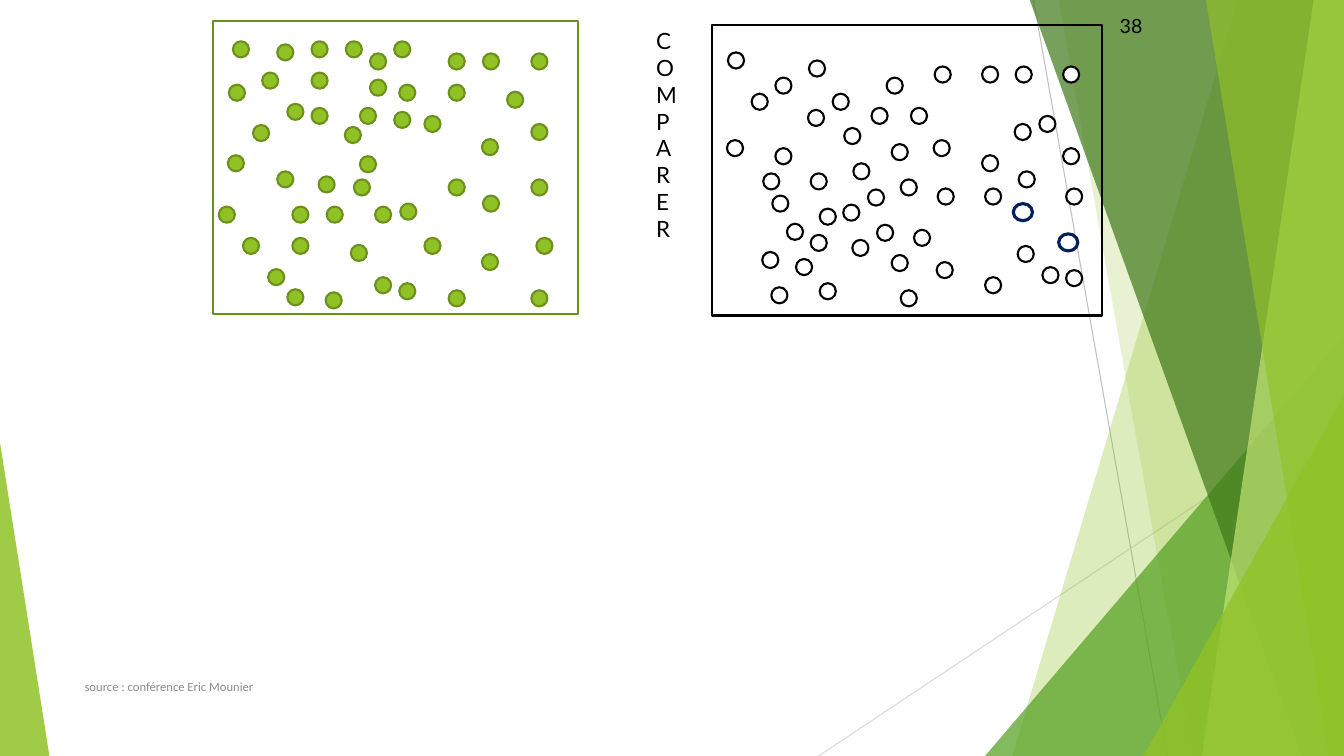
from dataclasses import dataclass, field

from lxml import etree
from pptx import Presentation
from pptx.dml.color import RGBColor
from pptx.enum.shapes import MSO_CONNECTOR, MSO_SHAPE
from pptx.enum.text import MSO_ANCHOR, MSO_AUTO_SIZE, PP_ALIGN
from pptx.oxml.ns import qn
from pptx.util import Inches, Pt

STRAIGHT = MSO_CONNECTOR.STRAIGHT
OVAL, RECTANGLE, TRIANGLE = MSO_SHAPE.OVAL, MSO_SHAPE.RECTANGLE, MSO_SHAPE.ISOSCELES_TRIANGLE
TOP, MIDDLE = MSO_ANCHOR.TOP, MSO_ANCHOR.MIDDLE
LEFT, RIGHT = PP_ALIGN.LEFT, PP_ALIGN.RIGHT
GROW, FIXED = MSO_AUTO_SIZE.SHAPE_TO_FIT_TEXT, MSO_AUTO_SIZE.NONE

WHITE = RGBColor(0xFF, 0xFF, 0xFF)
BLACK = RGBColor(0x00, 0x00, 0x00)
NAVY = RGBColor(0x00, 0x20, 0x60)
GRAY = RGBColor(0x8C, 0x8C, 0x8C)
SILVER = RGBColor(0xBF, 0xBF, 0xBF)
PALE_GRAY = RGBColor(0xD9, 0xD9, 0xD9)
LIME = RGBColor(0x90, 0xC2, 0x26)
PALE_LIME = RGBColor(0xC0, 0xE4, 0x74)
OLIVE = RGBColor(0x6B, 0x90, 0x1C)
GREEN = RGBColor(0x54, 0xA0, 0x21)
FOREST = RGBColor(0x3F, 0x78, 0x19)

WIDTH, HEIGHT = 13.33, 7.5
DOT = 0.16

COLUMNS = (0, 0.48, 0.48, 0.24, -0.01, 0.82, 1.3, 1.3, 1.06, 0.81)
GREEN_SPREAD, WHITE_SPREAD = 1, 0.98

ARCH = (0, 0, 0.31, 0.62, 0.31, 0, 0, 0.7, 0.38, 0.85)
SLOPE = (0, -0.4, 0.86, 0.4, 0.7, 0.23, 0.23, 0.71, 0.94, 0.91)
CROWN = (0, -0.24, 0.86, 0.34, 0.79, -0.08, -0.24, 0.86, 0.34, 0.5)
FAN = (0, 0, 0.61, 0.5, 0.78, -0.45, -0.29, 0.81, 0.16, 0.31)
WAVE = (0, 0.25, 0.95, 0.41, 0.87, 0.08, 0.25, 0.55, 0.41, 0.57)
SHELF = (0, 0, 0.88, 0.41, 0.73, 0, 0, 0.81, 0.49, 0.57)


@dataclass
class Cluster:
    left: float
    top: float
    rows: tuple
    strays: dict = field(default_factory=dict)

    def places(self, spread):
        for slot, (column, row) in enumerate(zip(COLUMNS, self.rows)):
            dx, dy = self.strays.get(slot, (0, 0))
            yield self.left + column * spread + dx, self.top + row + dy


GREEN_CLUSTERS = [
    Cluster(2.61, 0.41, ARCH, {0: (-0.3, 0)}),
    Cluster(3.97, 0.53, ARCH, {0: (-0.3, 0)}),
    Cluster(2.42, 2.05, ARCH, {0: (-0.25, 0)}),
    Cluster(2.27, 0.84, SLOPE, {8: (0.18, 0), 9: (0.08, 0)}),
    Cluster(3.97, 2.02, CROWN, {8: (0.29, 0)}),
]
WHITE_CLUSTERS = [
    Cluster(7.57, 1.72, FAN),
    Cluster(7.66, 2.07, FAN, {0: (0, -0.13), 2: (0, 0.13)}),
    Cluster(7.22, 0.52, WAVE, {6: (0.3, 0), 7: (0.15, 0)}),
    Cluster(9.27, 0.66, SHELF, {3: (-0.47, 0)}),
    Cluster(9.3, 1.87, SHELF, {3: (-0.47, 0), 5: (0, -0.17), 8: (0, 0.29)}),
]
LONE_GREEN_DOT = (2.85, 2.87)
NAVY_RINGS = [(10.5, 2.32), (10.05, 2.02)]


class DotSlide:
    def __init__(self, slide):
        self.shapes = slide.shapes

    def line(self, start, end, color):
        ray = self.shapes.add_connector(STRAIGHT, *map(Inches, start + end))
        ray.line.color.rgb = color
        ray.line.width = Pt(0.75)
        etree.SubElement(ray._element.spPr, qn("a:effectLst"))

    def paint(self, shape, fill, opacity=100, outline=None, weight=1.5):
        shape.shadow.inherit = False
        if fill is None:
            shape.fill.background()
        else:
            shape.fill.solid()
            shape.fill.fore_color.rgb = fill
            if opacity < 100:
                color = shape._element.spPr.find(".//" + qn("a:srgbClr"))
                etree.SubElement(color, qn("a:alpha")).set("val", str(opacity * 1000))
        if outline is None:
            shape.line.fill.background()
        else:
            shape.line.color.rgb = outline
            shape.line.width = Pt(weight)

    def shape(self, kind, box, fill=None, **style):
        shape = self.shapes.add_shape(kind, *map(Inches, box))
        self.paint(shape, fill, **style)
        return shape

    def triangle(self, left, top, width, apex, fill, opacity):
        box = (left, top, width, HEIGHT - top)
        self.shape(TRIANGLE, box, fill, opacity=opacity).adjustments[0] = apex

    def band(self, top_left, bottom_left, fill, opacity):
        corners = [(top_left, -0.01), (WIDTH, -0.01), (WIDTH, HEIGHT), (bottom_left, HEIGHT)]
        points = [(Inches(x), Inches(y)) for x, y in corners]
        outline = self.shapes.build_freeform(*points[0], scale=1.0)
        outline.add_line_segments(points[1:], close=True)
        self.paint(outline.convert_to_shape(), fill, opacity)

    def dot(self, place, fill, outline):
        self.shape(OVAL, (*place, DOT, DOT), fill, outline=outline)

    def clusters(self, clusters, spread, fill, outline):
        for cluster in clusters:
            for place in cluster.places(spread):
                self.dot(place, fill, outline)

    def text(self, box, paragraphs, font, size, color, align=LEFT, anchor=MIDDLE, fit=FIXED):
        frame = self.shapes.add_textbox(*map(Inches, box)).text_frame
        frame.word_wrap = True
        frame.auto_size = fit
        frame.vertical_anchor = anchor
        for index, words in enumerate(paragraphs):
            paragraph = frame.add_paragraph() if index else frame.paragraphs[0]
            paragraph.alignment = align
            run = paragraph.add_run()
            run.text = words
            run.font.name = font
            run.font.size = Pt(size)
            run.font.color.rgb = color


def draw_backdrop(page):
    page.line((10.25, 0), (11.58, HEIGHT), SILVER)
    page.line((WIDTH, 4.03), (8.12, HEIGHT), PALE_GRAY)
    page.band(12.28, 10.04, LIME, 30)
    page.band(10.5, 11.83, LIME, 20)
    page.triangle(9.77, 3.33, 3.56, 1, GREEN, 72)
    page.band(10.21, 12.91, FOREST, 70)
    page.band(13.03, 11.92, PALE_LIME, 70)
    page.band(11.96, 13.18, LIME, 65)
    page.triangle(11.34, 3.93, 1.99, 1, LIME, 80)
    page.triangle(0, 4.39, 0.49, 0, LIME, 85)


def draw_green_collection(page):
    page.shape(RECTANGLE, (2.11, 0.21, 3.62, 2.91), outline=OLIVE)
    page.clusters(GREEN_CLUSTERS, GREEN_SPREAD, LIME, OLIVE)
    page.dot(LONE_GREEN_DOT, LIME, OLIVE)


def draw_white_collection(page):
    page.shape(RECTANGLE, (7.06, 0.25, 3.87, 2.88), outline=BLACK)
    page.clusters(WHITE_CLUSTERS, WHITE_SPREAD, WHITE, BLACK)
    for x, y in NAVY_RINGS:
        page.shape(OVAL, (x, y, 0.19, 0.17), outline=NAVY, weight=2.25)


def draw_words(page):
    page.text((6.41, 0.22, 0.42, 2.26), ["C", "O", "M", "P", "ARER"], "Lato", 16, BLACK,
              anchor=TOP, fit=GROW)
    page.text((0.74, 6.61, 6.89, 0.4), ["source : conférence Eric Mounier"], "Calibri", 9, GRAY)
    page.text((10.26, 0.07, 1.17, 0.36), ["38"], "Lato", 14, BLACK, align=RIGHT)


def main():
    deck = Presentation()
    deck.slide_width, deck.slide_height = Inches(WIDTH), Inches(HEIGHT)
    page = DotSlide(deck.slides.add_slide(deck.slide_layouts[6]))
    draw_backdrop(page)
    draw_green_collection(page)
    draw_words(page)
    draw_white_collection(page)
    deck.save("out.pptx")


if __name__ == "__main__":
    main()
